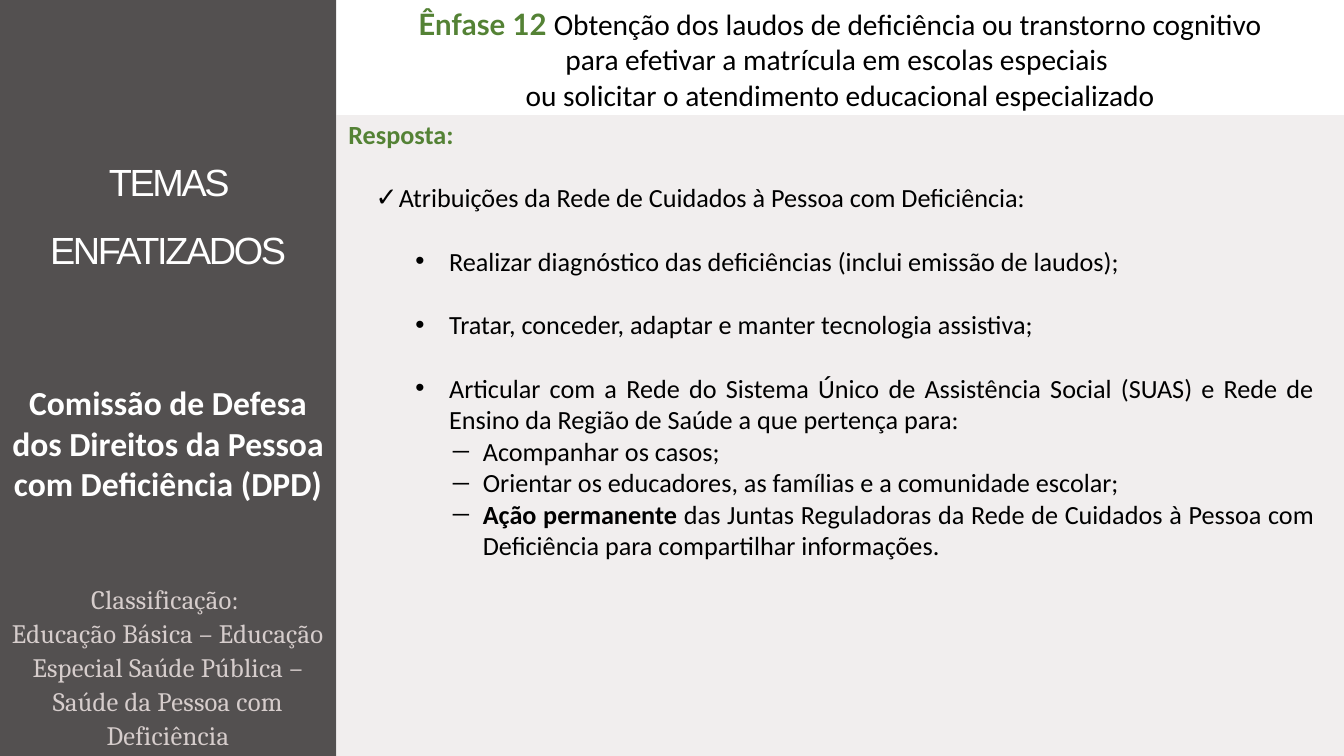
from lxml.etree import SubElement
from pptx import Presentation
from pptx.dml.color import RGBColor
from pptx.enum.shapes import MSO_SHAPE as Shape
from pptx.enum.text import MSO_ANCHOR as Anchor, PP_ALIGN as Align
from pptx.oxml.ns import qn
from pptx.util import Cm, Pt

WHITE = RGBColor(0xFF, 0xFF, 0xFF)
BLACK = RGBColor(0x00, 0x00, 0x00)
GREEN = RGBColor(0x54, 0x82, 0x35)
CHARCOAL = RGBColor(0x53, 0x50, 0x50)
ROSE_GREY = RGBColor(0xD6, 0xCD, 0xCC)

WIDTH, HEIGHT = 33.87, 19.05
SIDEBAR = 8.47
HEADER = 2.9
BODY_SIZE = 18.7
BLANK_LINE = 22.9

LEVELS = {
    1: (1.27, -0.58, "✓", "DejaVu Sans"),
    2: (2.54, -0.85, "•", "Arial"),
    3: (3.39, -0.85, "―", "Calibri"),
}
ANSWERS = [
    (1, BLANK_LINE, [("Atribuições da Rede de Cuidados à Pessoa com Deficiência:", False)]),
    (2, BLANK_LINE, [("Realizar diagnóstico das deficiências (inclui emissão de laudos);", False)]),
    (2, BLANK_LINE, [("Tratar, conceder, adaptar e manter tecnologia assistiva;", False)]),
    (2, BLANK_LINE, [("Articular com a Rede do Sistema Único de Assistência Social (SUAS) e Rede de "
                      "Ensino da Região de Saúde a que pertença para:", False)]),
    (3, 0, [("Acompanhar os casos;", False)]),
    (3, 0, [("Orientar os educadores, as famílias e a comunidade escolar;", False)]),
    (3, 0, [("Ação permanente ", True),
            ("das Juntas Reguladoras da Rede de Cuidados à Pessoa com Deficiência para "
             "compartilhar informações.", False)]),
]


def add_panel(slide, left, top, width, height, color, opacity=100):
    """Draw a plain rectangle with an optional opacity in percent."""
    shape = slide.shapes.add_shape(Shape.RECTANGLE, Cm(left), Cm(top), Cm(width), Cm(height))
    shape.shadow.inherit = False
    shape.fill.solid()
    shape.fill.fore_color.rgb = color
    shape.line.fill.background()
    if opacity < 100:
        color_element = shape.fill._xPr.find(qn("a:solidFill"))[0]
        SubElement(color_element, qn("a:alpha"), val=str(opacity * 1000))


def add_text_frame(slide, left, top, width, height, side=0.18, edge=0.08, anchor=Anchor.TOP):
    """Add a wrapping text box and return its text frame."""
    frame = slide.shapes.add_textbox(Cm(left), Cm(top), Cm(width), Cm(height)).text_frame
    frame.word_wrap = True
    frame.vertical_anchor = anchor
    frame.margin_left = frame.margin_right = Cm(side)
    frame.margin_top = frame.margin_bottom = Cm(edge)
    return frame


def add_paragraph(frame, align=Align.CENTER, before=0, spacing=1.0):
    """Return the first unused paragraph of the frame, formatted."""
    first = frame.paragraphs[0]
    paragraph = frame.add_paragraph() if first.runs else first
    paragraph.alignment = align
    paragraph.space_before = Pt(before)
    paragraph.line_spacing = spacing
    return paragraph


def add_run(paragraph, text, size, color, font="Calibri", bold=False, tracking=0):
    """Append one formatted run; tracking is in points."""
    run = paragraph.add_run()
    run.text = text
    run.font.name = font
    run.font.size = Pt(size)
    run.font.bold = bold
    run.font.color.rgb = color
    if tracking:
        run._r.get_or_add_rPr().set("spc", str(round(tracking * 100)))


def set_bullet(paragraph, level):
    """Give the paragraph the indent and bullet of its level."""
    margin, indent, character, font = LEVELS[level]
    paragraph.level = level
    properties = paragraph._p.get_or_add_pPr()
    properties.set("marL", str(Cm(margin)))
    properties.set("indent", str(Cm(indent)))
    SubElement(properties, qn("a:buFont"), typeface=font)
    SubElement(properties, qn("a:buChar"), char=character)


def add_sidebar(slide):
    """Draw the dark sidebar with its title, commission and classification."""
    add_panel(slide, 0, 0, SIDEBAR, HEIGHT, CHARCOAL)
    title = add_text_frame(slide, 0, 3.4, SIDEBAR, 3.48, 0, 0.03, Anchor.MIDDLE)
    add_run(add_paragraph(title, before=0.7, spacing=1.5), "TEMAS ENFATIZADOS",
            27, WHITE, "Arial", tracking=-1.7)
    commission = add_text_frame(slide, 0, 9.55, SIDEBAR, 3.25)
    add_run(add_paragraph(commission),
            "Comissão de Defesa dos Direitos da Pessoa com Deficiência (DPD)", 24, WHITE, bold=True)
    classification = add_text_frame(slide, 0, 14.6, SIDEBAR, 4.37, 0, 0.03)
    for text in ("Classificação: ",
                 "Educação Básica – Educação Especial Saúde Pública – Saúde da Pessoa com Deficiência"):
        add_run(add_paragraph(classification, before=0.7, spacing=1.06), text,
                19, ROSE_GREY, "Cambria", tracking=0.2)


def add_answers(slide):
    """Draw the pale panel with the bulleted answer."""
    add_panel(slide, SIDEBAR, HEADER, WIDTH - SIDEBAR, HEIGHT - HEADER, ROSE_GREY, 32)
    frame = add_text_frame(slide, 8.6, HEADER, 24.7, 14.76)
    add_run(add_paragraph(frame, Align.JUSTIFY), "Resposta:", BODY_SIZE, GREEN, bold=True)
    for level, before, pieces in ANSWERS:
        paragraph = add_paragraph(frame, Align.JUSTIFY, before)
        set_bullet(paragraph, level)
        for text, bold in pieces:
            add_run(paragraph, text, BODY_SIZE, BLACK, bold=bold)


def add_header(slide):
    """Draw the three centred heading lines."""
    frame = add_text_frame(slide, SIDEBAR, 0.08, WIDTH - SIDEBAR, 3.8)
    paragraph = add_paragraph(frame)
    add_run(paragraph, "Ênfase 12 ", 21, GREEN, "Lato", True)
    add_run(paragraph, "Obtenção dos laudos de deficiência ou transtorno cognitivo", 21, BLACK)
    for text in ("para efetivar a matrícula em escolas especiais ",
                 "ou solicitar o atendimento educacional especializado"):
        add_run(add_paragraph(frame), text, 21, BLACK)


def main():
    """Build and save the slide."""
    presentation = Presentation()
    presentation.slide_width = Cm(WIDTH)
    presentation.slide_height = Cm(HEIGHT)
    slide = presentation.slides.add_slide(presentation.slide_layouts[6])
    add_sidebar(slide)
    add_answers(slide)
    add_header(slide)
    presentation.save("out.pptx")


if __name__ == "__main__":
    main()
